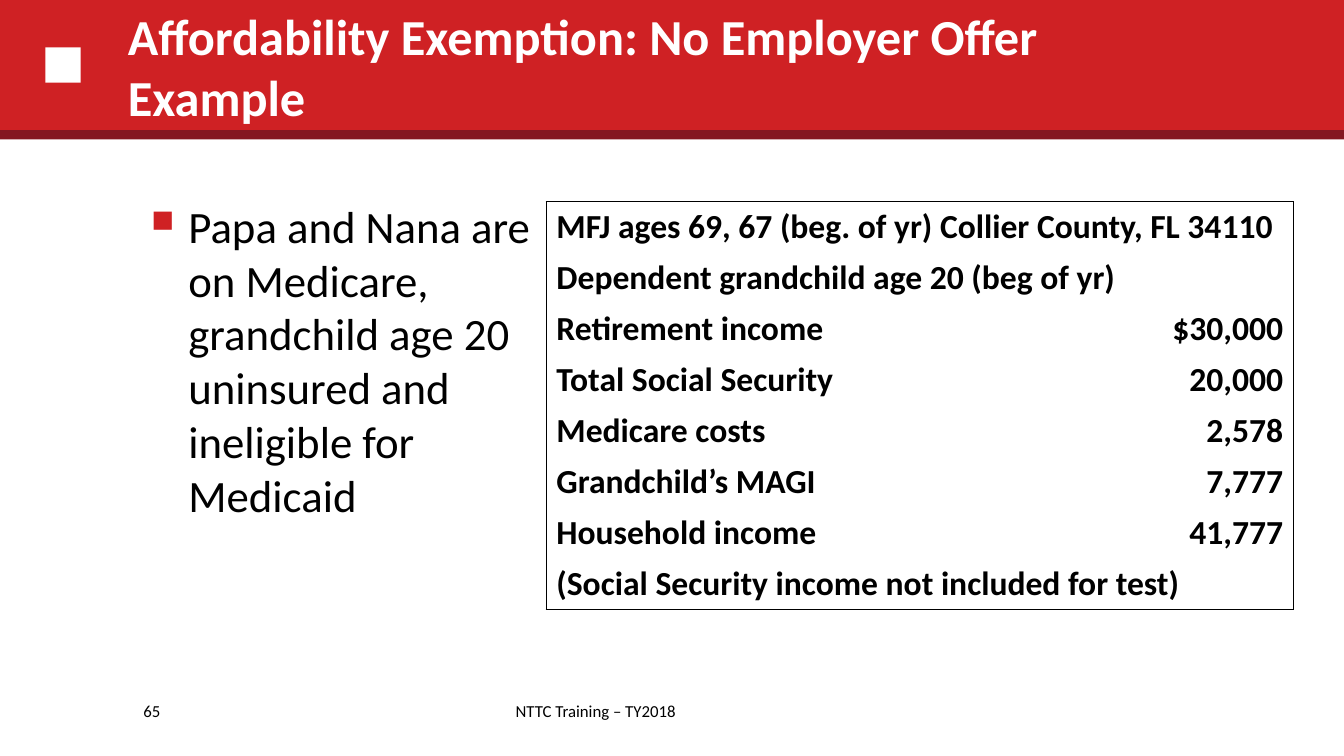
"""Build the affordability exemption example slide on a 160 by 90 grid."""
from dataclasses import dataclass

from lxml import etree
from pptx import Presentation
from pptx.dml.color import RGBColor
from pptx.enum.shapes import MSO_SHAPE
from pptx.enum.text import MSO_ANCHOR, PP_ALIGN
from pptx.oxml.ns import qn
from pptx.util import Emu, Pt

RECT = MSO_SHAPE.RECTANGLE
TOP, MIDDLE = MSO_ANCHOR.TOP, MSO_ANCHOR.MIDDLE
LEFT, CENTER, RIGHT = PP_ALIGN.LEFT, PP_ALIGN.CENTER, PP_ALIGN.RIGHT
RED, DARK_RED, WHITE, BLACK = "CF2124", "841721", "FFFFFF", "000000"
FONT = "Calibri"
COLUMNS, ROWS = 160, 90


@dataclass
class Box:
    """A place on the grid, in columns and rows."""
    col: float
    row: float
    width: float
    height: float


@dataclass
class Bar:
    """A filled rectangle."""
    box: Box
    fill: str


@dataclass
class Label:
    """A text box with one paragraph."""
    box: Box
    text: str
    size: int
    color: str = BLACK
    bold: bool = False
    align: PP_ALIGN = LEFT
    anchor: MSO_ANCHOR = MIDDLE
    bullet: bool = False


@dataclass
class Fact:
    """A table row; without an amount it spans both columns."""
    name: str
    amount: str = ""


BARS = [
    Bar(Box(0, 0, 160, 15.8), RED),
    Bar(Box(5.4, 5.64, 4.2, 4.2), WHITE),
    Bar(Box(0, 15.5, 160, 1.1), DARK_RED),
]
LABELS = [
    Label(Box(45.6, 82.2, 50.64, 4.8), "NTTC Training – TY2018", 12, align=CENTER),
    Label(Box(8.04, 82.2, 12.24, 4.8), "65", 12, align=RIGHT),
    Label(Box(16.8, 23.04, 52.2, 52.8),
          "Papa and Nana are on Medicare, grandchild age 20 uninsured and "
          "ineligible for Medicaid", 32, anchor=TOP, bullet=True),
    Label(Box(14.04, 0.36, 127.92, 15),
          "Affordability Exemption: No Employer Offer Example", 36, WHITE, True),
]
FACTS = [
    Fact("MFJ ages 69, 67 (beg. of yr) Collier County, FL 34110"),
    Fact("Dependent grandchild age 20 (beg of yr)"),
    Fact("Retirement income", "$30,000"),
    Fact("Total Social Security", "20,000"),
    Fact("Medicare costs", "2,578"),
    Fact("Grandchild’s MAGI", "7,777"),
    Fact("Household income", "41,777"),
    Fact("(Social Security income not included for test)"),
]
FACT_COLUMNS = (70.32, 18.6)
FACT_ROW = 6.08
FACTS_BOX = Box(65.04, 24, sum(FACT_COLUMNS), FACT_ROW * len(FACTS))


def rgb(color: str) -> RGBColor:
    """Return the colour of a hex string."""
    return RGBColor.from_string(color)


def place(prs, box: Box) -> tuple:
    """Return left, top, width and height of a grid box."""
    x, y = prs.slide_width / COLUMNS, prs.slide_height / ROWS
    return (Emu(round(box.col * x)), Emu(round(box.row * y)),
            Emu(round(box.width * x)), Emu(round(box.height * y)))


def style(p, size: int, color: str, bold: bool, align: PP_ALIGN) -> None:
    """Format a paragraph and its runs."""
    p.alignment = align
    for r in p.runs:
        r.font.name, r.font.size, r.font.bold = FONT, Pt(size), bold
        r.font.color.rgb = rgb(color)


def add_bullet(p) -> None:
    """Give a paragraph a red square bullet with a hanging indent."""
    pPr = p._p.get_or_add_pPr()
    indent = Pt(26.64)
    pPr.set("marL", str(indent))
    pPr.set("indent", str(-indent))
    color = etree.SubElement(pPr, qn("a:buClr"))
    etree.SubElement(color, qn("a:srgbClr"), val=RED)
    etree.SubElement(pPr, qn("a:buSzPct"), val="70000")
    etree.SubElement(pPr, qn("a:buChar"), char="■")


def add_bar(prs, s, bar: Bar) -> None:
    """Draw a filled rectangle."""
    sp = s.shapes.add_shape(RECT, *place(prs, bar.box))
    sp.shadow.inherit = False
    sp.fill.solid()
    sp.fill.fore_color.rgb = rgb(bar.fill)
    sp.line.fill.background()


def add_label(prs, s, label: Label) -> None:
    """Draw a text box."""
    tf = s.shapes.add_textbox(*place(prs, label.box)).text_frame
    tf.word_wrap = True
    tf.vertical_anchor = label.anchor
    tf.text = label.text
    p = tf.paragraphs[0]
    if label.bullet:
        add_bullet(p)
    style(p, label.size, label.color, label.bold, label.align)


def add_borders(cell, sides: dict) -> None:
    """Draw black lines on the chosen sides of a cell and clear the others."""
    tcPr = cell._tc.get_or_add_tcPr()
    for side, shown in sides.items():
        line = etree.SubElement(tcPr, qn(f"a:ln{side}"), w=str(Pt(1)))
        if shown:
            fill = etree.SubElement(line, qn("a:solidFill"))
            etree.SubElement(fill, qn("a:srgbClr"), val=BLACK)
        else:
            etree.SubElement(line, qn("a:noFill"))


def add_facts(prs, s) -> None:
    """Draw the table of household facts inside one outline."""
    last = len(FACTS) - 1
    table = s.shapes.add_table(len(FACTS), 2, *place(prs, FACTS_BOX)).table
    table.first_row = table.horz_banding = False
    for column, width in zip(table.columns, FACT_COLUMNS):
        column.width = Emu(round(width * prs.slide_width / COLUMNS))
    for i, fact in enumerate(FACTS):
        spans = not fact.amount
        for j, (text, align) in enumerate([(fact.name, LEFT), (fact.amount, RIGHT)]):
            cell = table.cell(i, j)
            cell.text_frame.text = text
            style(cell.text_frame.paragraphs[0], 24, BLACK, True, align)
            add_borders(cell, {"L": j == 0, "R": j == 1 or spans,
                               "T": i == 0, "B": i == last})
            cell.fill.background()
        if spans:
            table.cell(i, 0).merge(table.cell(i, 1))


def main() -> None:
    """Build and save the slide."""
    prs = Presentation()
    prs.slide_width, prs.slide_height = Emu(12192000), Emu(6858000)
    s = prs.slides.add_slide(prs.slide_layouts[6])
    for bar in BARS:
        add_bar(prs, s, bar)
    for label in LABELS:
        add_label(prs, s, label)
    add_facts(prs, s)
    prs.save("out.pptx")


if __name__ == "__main__":
    main()
